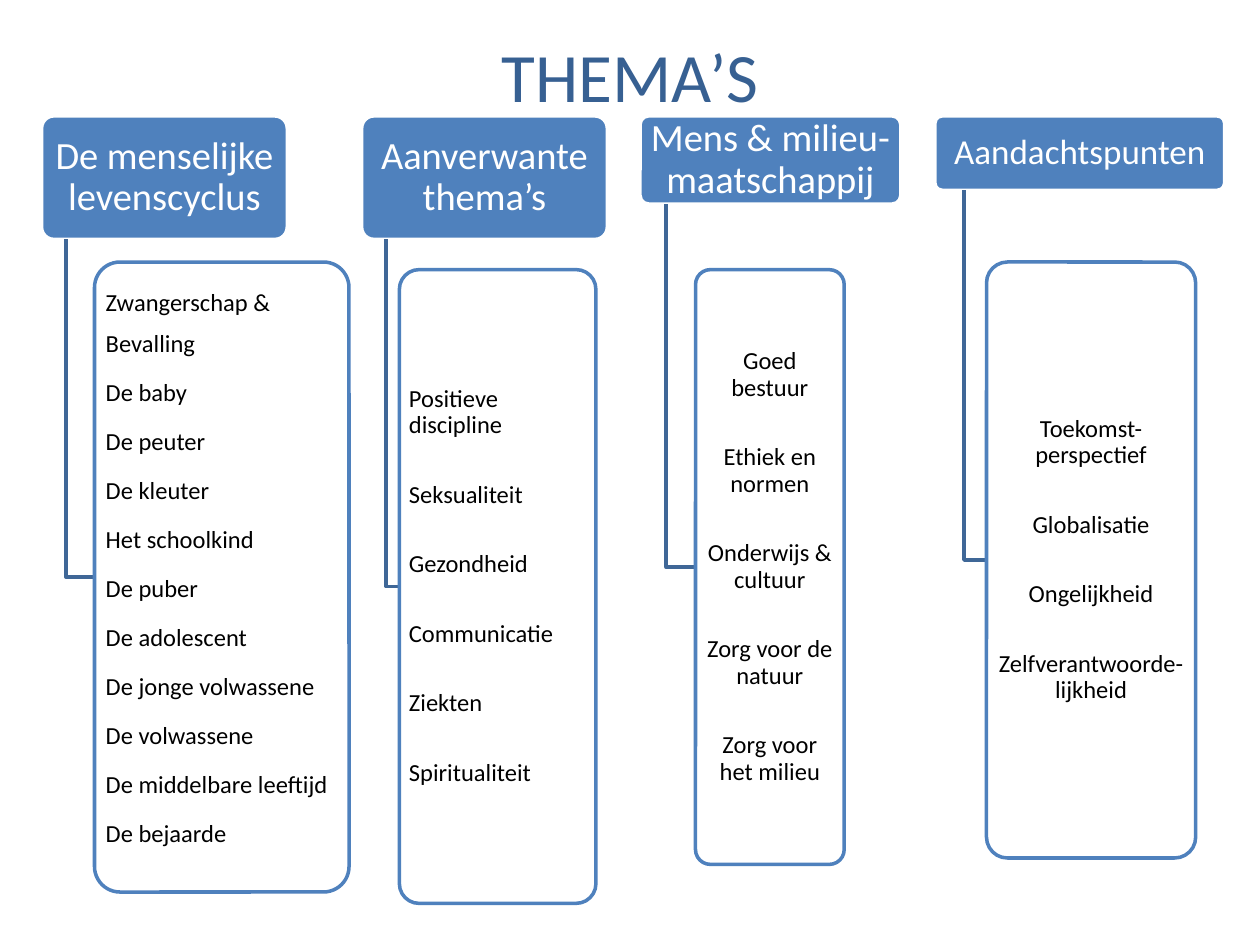
from pptx import Presentation
from pptx.dml.color import RGBColor
from pptx.enum.shapes import MSO_SHAPE
from pptx.enum.text import MSO_ANCHOR, PP_ALIGN
from pptx.util import Inches, Pt

ROUNDED = MSO_SHAPE.ROUNDED_RECTANGLE
MIDDLE = MSO_ANCHOR.MIDDLE
LEFT, CENTER = PP_ALIGN.LEFT, PP_ALIGN.CENTER

COLORS = {"title": "376092", "accent": "4F81BD", "branch": "3F6797",
          "white": "FFFFFF", "black": "000000"}
FONT = "Calibri"
TITLE = "THEMA’S"
HEADING_TOP = 0.92

THEMES = [
    {"heading": "De menselijke levenscyclus", "heading_size": 22,
     "heading_box": (0.33, 1.95, 0.98), "topic_box": (0.75, 2.08, 2.02, 5),
     "format": {"align": LEFT, "line": 1.4, "gap": 4.5, "bottom": 0.27},
     "topics": ["Zwangerschap & Bevalling", "De baby", "De peuter", "De kleuter",
                "Het schoolkind", "De puber", "De adolescent", "De jonge volwassene",
                "De volwassene", "De middelbare leeftijd", "De bejaarde"]},
    {"heading": "Aanverwante thema’s", "heading_size": 22,
     "heading_box": (2.87, 1.95, 0.98), "topic_box": (3.17, 2.14, 1.56, 5.03),
     "format": {"align": LEFT, "gap": 24.6},
     "topics": ["Positieve discipline", "Seksualiteit", "Gezondheid",
                "Communicatie", "Ziekten", "Spiritualiteit"]},
    {"heading": "Mens & milieu- maatschappij", "heading_size": 22,
     "heading_box": (5.08, 2.07, 0.7), "topic_box": (5.52, 2.14, 1.18, 4.72),
     "format": {"gap": 24.6},
     "topics": ["Goed bestuur", "Ethiek en normen", "Onderwijs & cultuur",
                "Zorg voor de natuur", "Zorg voor het milieu"]},
    {"heading": "Aandachtspunten", "heading_size": 20,
     "heading_box": (7.42, 2.3, 0.59), "topic_box": (7.83, 2.08, 1.66, 4.73),
     "format": {"gap": 24.6},
     "topics": ["Toekomst-perspectief", "Globalisatie", "Ongelijkheid",
                "Zelfverantwoorde-lijkheid"]},
]


def rgb(name):
    return RGBColor.from_string(COLORS[name])


def write(shape, lines, *, size, color, align=CENTER, line=0.9, gap=0,
          side=0.03, edge=0.02, bottom=None):
    frame = shape.text_frame
    frame.word_wrap = True
    frame.vertical_anchor = MIDDLE
    frame.margin_left = frame.margin_right = Inches(side)
    frame.margin_top = Inches(edge)
    frame.margin_bottom = Inches(edge if bottom is None else bottom)
    for index, text in enumerate(lines):
        paragraph = frame.paragraphs[0] if index == 0 else frame.add_paragraph()
        paragraph.alignment = align
        paragraph.line_spacing = line
        paragraph.space_before = Pt(0)
        paragraph.space_after = Pt(gap if index < len(lines) - 1 else 0)
        run = paragraph.add_run()
        run.text = text
        run.font.name = FONT
        run.font.size = Pt(size)
        run.font.color.rgb = rgb(color)


def outline(shape, color):
    shape.shadow.inherit = False
    shape.line.color.rgb = rgb(color)
    shape.line.width = Pt(2)


def add_box(slide, left, top, width, height, fill, border):
    box = slide.shapes.add_shape(
        ROUNDED, Inches(left), Inches(top), Inches(width), Inches(height))
    box.adjustments[0] = 0.1
    box.fill.solid()
    box.fill.fore_color.rgb = rgb(fill)
    outline(box, border)
    return box


def add_branch(slide, x, start, end_x, end_y):
    builder = slide.shapes.build_freeform(Inches(x), Inches(start))
    builder.add_line_segments(
        [(Inches(x), Inches(end_y)), (Inches(end_x), Inches(end_y))], close=False)
    branch = builder.convert_to_shape()
    branch.fill.background()
    outline(branch, "branch")


def add_theme(slide, theme):
    left, width, height = theme["heading_box"]
    topic_left, topic_top, topic_width, topic_height = theme["topic_box"]

    heading = add_box(slide, left, HEADING_TOP, width, height, "accent", "white")
    write(heading, [theme["heading"]], size=theme["heading_size"], color="white",
          side=0.05, edge=0.03)
    add_branch(slide, left + width / 10, HEADING_TOP + height,
               topic_left, topic_top + topic_height / 2)
    topics = add_box(slide, topic_left, topic_top, topic_width, topic_height,
                     "white", "accent")
    write(topics, theme["topics"], size=14, color="black", **theme["format"])


def main():
    deck = Presentation()
    deck.slide_width, deck.slide_height = Inches(10), Inches(7.5)
    slide = deck.slides.add_slide(deck.slide_layouts[5])
    title = slide.shapes.title
    title.left, title.top = Inches(0.5), Inches(0.33)
    title.width, title.height = Inches(9), Inches(0.53)
    write(title, [TITLE], size=39.6, color="title", line=1.0, side=0.1, edge=0.05)
    for theme in THEMES:
        add_theme(slide, theme)
    deck.save("out.pptx")


if __name__ == "__main__":
    main()
